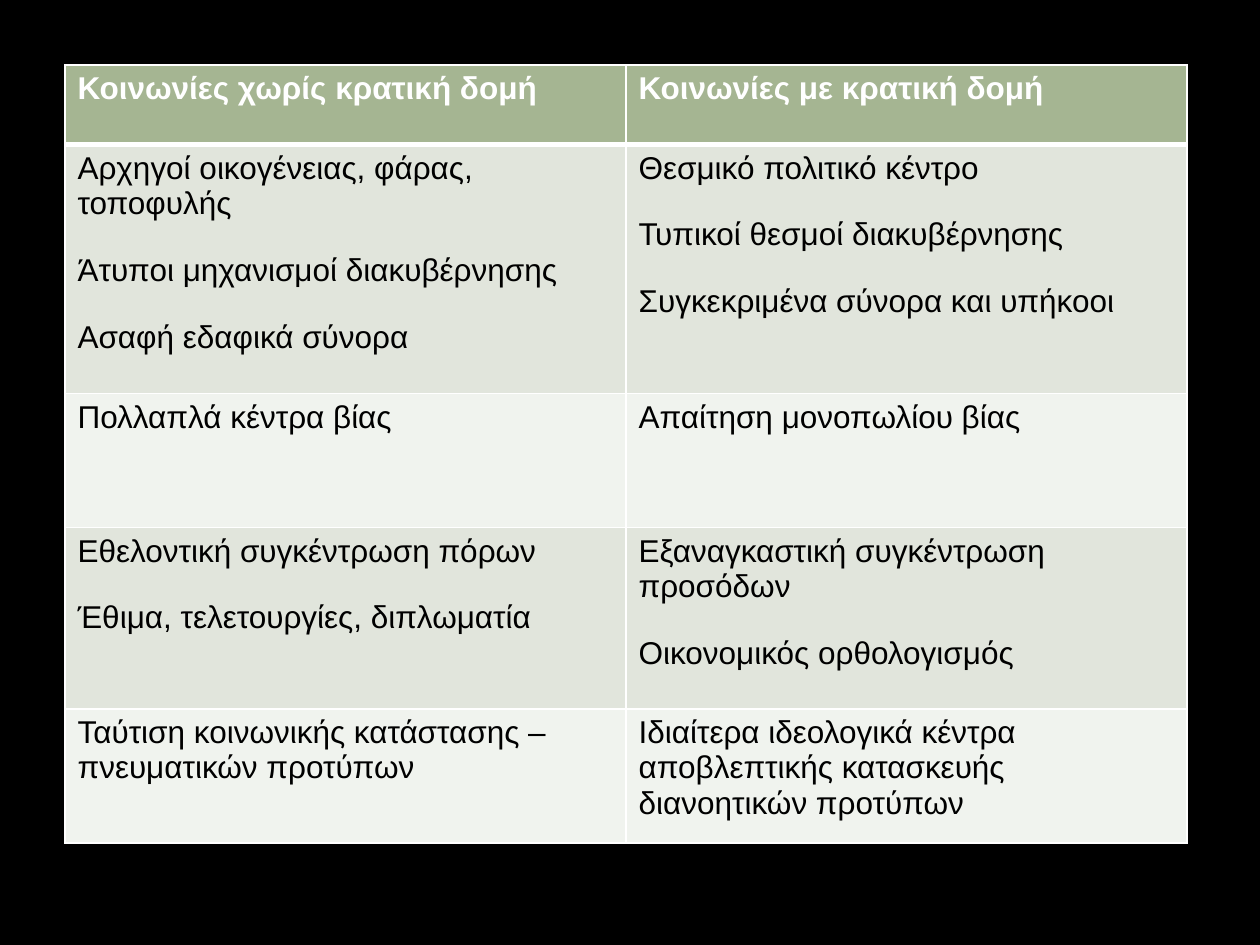
from dataclasses import dataclass

from lxml import etree
from pptx import Presentation
from pptx.dml.color import RGBColor
from pptx.oxml.ns import qn
from pptx.util import Cm, Pt


@dataclass(frozen=True)
class Theme:
    """Colours and type sizes of the deck."""
    font: str = "Arial"
    size: int = 18
    gap: int = 18
    background: str = "000000"
    body: str = "000000"
    light: str = "FFFFFF"
    header: str = "A5B592"
    bands: tuple = ("E1E5DC", "F0F3EE")
    rule: int = 1
    header_rule: int = 3


class Composer:
    """Holds the theme and the current page and adds elements to it."""

    def __init__(self, page, theme):
        """Keep the page and theme, and paint the background."""
        self.page, self.theme = page, theme
        page.background.fill.solid()
        page.background.fill.fore_color.rgb = RGBColor.from_string(theme.background)

    def border(self, cell, side, width):
        """Draw one solid edge of a cell."""
        properties = cell._tc.get_or_add_tcPr()
        line = etree.SubElement(properties, qn(f"a:ln{side}"), w=str(Pt(width)))
        fill = etree.SubElement(line, qn("a:solidFill"))
        etree.SubElement(fill, qn("a:srgbClr"), val=self.theme.light)

    def cell(self, cell, paragraphs, row):
        """Style a cell by its row and write its paragraphs."""
        theme = self.theme
        heading = row == 0
        for side in "LRTB":
            thick = (side == "B" and row == 0) or (side == "T" and row == 1)
            self.border(cell, side, theme.header_rule if thick else theme.rule)
        cell.fill.solid()
        shade = theme.header if heading else theme.bands[(row - 1) % 2]
        cell.fill.fore_color.rgb = RGBColor.from_string(shade)
        frame = cell.text_frame
        for index, content in enumerate(paragraphs):
            para = frame.add_paragraph() if index else frame.paragraphs[0]
            para.space_before = Pt(theme.gap if index else 0)
            span = para.add_run()
            span.text = content
            span.font.name = theme.font
            span.font.size = Pt(theme.size)
            span.font.bold = heading
            colour = theme.light if heading else theme.body
            span.font.color.rgb = RGBColor.from_string(colour)

    def table(self, left, top, column_width, heights, rows):
        """Add a table with equal columns and the given row heights in cm."""
        columns = len(rows[0])
        frame = self.page.shapes.add_table(
            len(rows), columns, Cm(left), Cm(top),
            Cm(column_width * columns), Cm(sum(heights)))
        table = frame.table
        table.horz_banding = False
        for column in table.columns:
            column.width = Cm(column_width)
        for index, (height, row) in enumerate(zip(heights, rows)):
            table.rows[index].height = Cm(height)
            for position, paragraphs in enumerate(row):
                self.cell(table.cell(index, position), paragraphs, index)


ROWS = [
    (["Κοινωνίες χωρίς κρατική δομή"], ["Κοινωνίες με κρατική δομή"]),
    (["Αρχηγοί οικογένειας, φάρας, τοποφυλής",
      "Άτυποι μηχανισμοί διακυβέρνησης",
      "Ασαφή εδαφικά σύνορα"],
     ["Θεσμικό πολιτικό κέντρο",
      "Τυπικοί θεσμοί διακυβέρνησης",
      "Συγκεκριμένα σύνορα και υπήκοοι"]),
    (["Πολλαπλά κέντρα βίας"], ["Απαίτηση μονοπωλίου βίας"]),
    (["Εθελοντική συγκέντρωση πόρων",
      "Έθιμα, τελετουργίες, διπλωματία"],
     ["Εξαναγκαστική συγκέντρωση προσόδων",
      "Οικονομικός ορθολογισμός"]),
    (["Ταύτιση κοινωνικής κατάστασης – πνευματικών προτύπων"],
     ["Ιδιαίτερα ιδεολογικά κέντρα αποβλεπτικής κατασκευής "
      "διανοητικών προτύπων"]),
]


def main():
    """Build the comparison of societies and save the deck."""
    deck = Presentation()
    deck.slide_width, deck.slide_height = Cm(25.4), Cm(19.05)
    composer = Composer(deck.slides.add_slide(deck.slide_layouts[6]), Theme())
    composer.table(1.31, 1.31, 11.31, [1.6, 5.02, 2.7, 3.66, 2.7], ROWS)
    deck.save("out.pptx")


if __name__ == "__main__":
    main()
